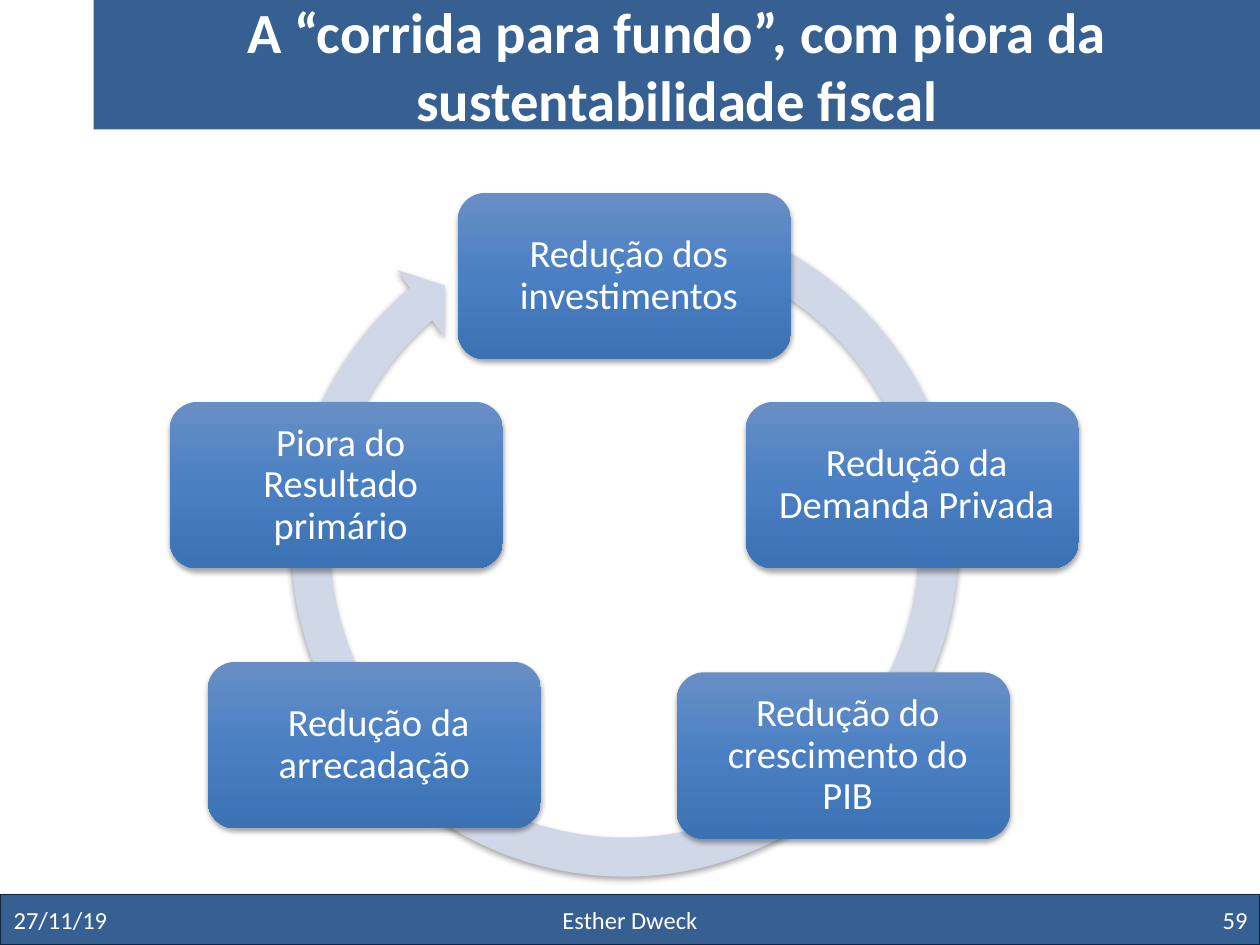
import copy

import lxml.etree
import pptx
import pptx.dml.color
import pptx.enum.shapes
import pptx.enum.text
import pptx.oxml.ns
import pptx.util

Pt = pptx.util.Pt
RGB = pptx.dml.color.RGBColor.from_string
qn = pptx.oxml.ns.qn
SHAPE = pptx.enum.shapes.MSO_SHAPE
ALIGN = pptx.enum.text.PP_ALIGN
COLORS = {
    "band": "376092",
    "band_line": "0F243E",
    "ring": "D0D8E8",
    "box_top": "688FC5",
    "box_middle": "4A80C3",
    "box_bottom": "3B72B3",
    "shadow": "000000",
    "text": "FFFFFF",
}


def add_shape(kind, left, top, width, height, fill=None, shadow=True):
    """Add a shape without outline, with an optional soft shadow below."""
    shape = slide.shapes.add_shape(kind, Pt(left), Pt(top), Pt(width), Pt(height))
    shape.line.fill.background()
    if fill:
        shape.fill.solid()
        shape.fill.fore_color.rgb = RGB(COLORS[fill])
    shape.shadow.inherit = False
    if shadow:
        effects = shape._element.spPr.find(qn("a:effectLst"))
        outer = lxml.etree.SubElement(
            effects, qn("a:outerShdw"), blurRad=str(Pt(3.1)), dist=str(Pt(1.8)),
            dir="5400000", rotWithShape="0")
        color = lxml.etree.SubElement(outer, qn("a:srgbClr"), val=COLORS["shadow"])
        lxml.etree.SubElement(color, qn("a:alpha"), val="35000")
    return shape


def write_text(shape, text, size, align):
    """Put one white, vertically centred paragraph in a shape."""
    frame = shape.text_frame
    frame.word_wrap = True
    frame.vertical_anchor = pptx.enum.text.MSO_ANCHOR.MIDDLE
    paragraph = frame.paragraphs[0]
    paragraph.text = text
    paragraph.alignment = align
    paragraph.font.name = "Calibri"
    paragraph.font.size = Pt(size)
    paragraph.font.color.rgb = RGB(COLORS["text"])
    return paragraph


presentation = pptx.Presentation()
presentation.slide_width = Pt(720)
presentation.slide_height = Pt(540)
slide = presentation.slides.add_slide(presentation.slide_layouts[6])

# Footer band
band = add_shape(SHAPE.RECTANGLE, 0, 511.2, 720, 28.8, "band")
band.line.color.rgb = RGB(COLORS["band_line"])
band.line.width = Pt(0.75)

# Ring arrow behind the cycle
ring = add_shape(SHAPE.CIRCULAR_ARROW, 154, 107.3, 406, 406, "ring")
for index, value in enumerate((0.055, 3.307, 137.73, 173.878, 0.058)):
    ring.adjustments[index] = value

# Steps of the cycle, clockwise from the top
steps = [
    ("Redução dos investimentos", 261.6, 110.2),
    ("Redução da Demanda Privada", 426.1, 229.7),
    ("Redução do crescimento do PIB", 386.7, 384.2),
    ("Redução da arrecadação ", 118.7, 378.2),
    ("Piora do Resultado primário", 97, 229.7),
]
for text, left, top in steps:
    box = add_shape(SHAPE.ROUNDED_RECTANGLE, left, top, 190.4, 95.2)
    box.fill.gradient()
    box.fill.gradient_angle = 270
    stop_list = box._element.spPr.find(".//" + qn("a:gsLst"))
    stop_list.insert(1, copy.deepcopy(stop_list[0]))
    names = ("box_top", "box_middle", "box_bottom")
    for stop, name, position in zip(box.fill.gradient_stops, names, (0, 0.5, 1)):
        stop.color.rgb = RGB(COLORS[name])
        stop.position = position
    frame = box.text_frame
    frame.margin_left = frame.margin_top = frame.margin_bottom = Pt(11.5)
    frame.margin_right = Pt(6.5)
    write_text(box, text, 22, ALIGN.CENTER).line_spacing = 0.9

# Title
title = add_shape(SHAPE.RECTANGLE, 53.5, 0, 666.5, 74, "band", shadow=False)
write_text(title, "A “corrida para fundo”, com piora da sustentabilidade fiscal",
           32.4, ALIGN.CENTER).font.bold = True

# Footer texts
for text, left, width, align in [
    ("27/11/19", 0.7, 168, ALIGN.LEFT),
    ("Esther Dweck", 246, 228, ALIGN.CENTER),
    ("59", 552, 168, ALIGN.RIGHT),
]:
    footer = slide.shapes.add_textbox(Pt(left), Pt(511.2), Pt(width), Pt(28.8))
    write_text(footer, text, 14, align)

presentation.save("out.pptx")
